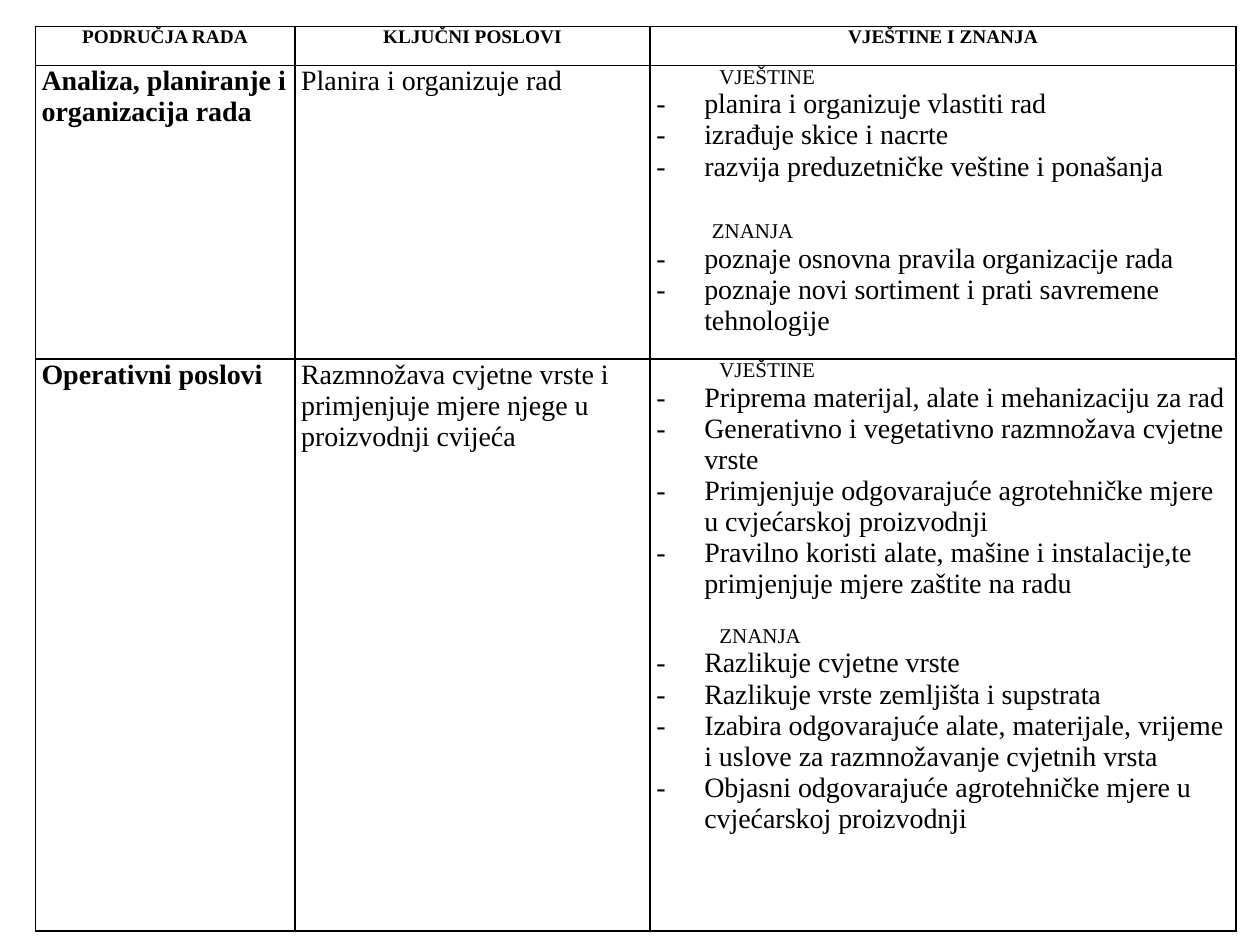
from dataclasses import dataclass

from lxml import etree
from pptx import Presentation
from pptx.dml.color import RGBColor
from pptx.enum import text
from pptx.oxml import ns
from pptx.util import Inches, Pt

COLORS = {"ink": "000000", "border": "000000"}
FONT = "Times New Roman"
HEADER_SIZE, HEADING_SIZE, BODY_SIZE = 11, 12, 16
COLUMN_WIDTHS = (2.06, 2.82, 4.65)
ROW_HEIGHTS = (0.31, 2.33, 4.54)
HEADERS = ("PODRUČJA RADA", "KLJUČNI POSLOVI", "VJEŠTINE I ZNANJA")


@dataclass
class Section:
    title: str
    items: tuple[str, ...]
    indent: float = 0.5
    space_before: float = 0


@dataclass
class WorkArea:
    name: str
    key_task: str
    sections: tuple[Section, ...]
    alignment: text.PP_ALIGN = text.PP_ALIGN.LEFT


WORK_AREAS = (
    WorkArea(
        "Analiza, planiranje i organizacija rada",
        "Planira i organizuje rad",
        (
            Section("VJEŠTINE", (
                "planira i organizuje vlastiti rad",
                "izrađuje skice i nacrte",
                "razvija preduzetničke veštine i ponašanja",
            )),
            Section("ZNANJA", (
                "poznaje osnovna pravila organizacije rada",
                "poznaje novi sortiment i prati savremene tehnologije",
            ), indent=0.44, space_before=21.5),
        ),
    ),
    WorkArea(
        "Operativni poslovi",
        "Razmnožava cvjetne vrste i primjenjuje mjere njege u proizvodnji cvijeća",
        (
            Section("VJEŠTINE", (
                "Priprema materijal, alate i mehanizaciju za rad",
                "Generativno i vegetativno razmnožava cvjetne vrste",
                "Primjenjuje odgovarajuće agrotehničke mjere u cvjećarskoj proizvodnji",
                "Pravilno koristi alate, mašine i instalacije,te primjenjuje mjere zaštite na radu",
            )),
            Section("ZNANJA", (
                "Razlikuje cvjetne vrste",
                "Razlikuje vrste zemljišta i supstrata",
                "Izabira odgovarajuće alate, materijale, vrijeme i uslove za razmnožavanje cvjetnih vrsta",
                "Objasni odgovarajuće agrotehničke mjere u cvjećarskoj proizvodnji",
            ), space_before=14),
        ),
        text.PP_ALIGN.JUSTIFY,
    ),
)


def write(paragraph, content: str, size: float, bold: bool = False,
          alignment: text.PP_ALIGN = text.PP_ALIGN.LEFT) -> None:
    paragraph.text = content
    paragraph.alignment = alignment
    for run in paragraph.runs:
        run.font.name = FONT
        run.font.size = Pt(size)
        run.font.bold = bold
        run.font.color.rgb = RGBColor.from_string(COLORS["ink"])


def set_indent(paragraph, left: float, first_line: float = 0) -> None:
    properties = paragraph._p.get_or_add_pPr()
    properties.set("marL", str(Inches(left)))
    properties.set("indent", str(Inches(first_line)))


def add_dash(paragraph) -> None:
    set_indent(paragraph, 0.38, -0.38)
    properties = paragraph._p.get_or_add_pPr()
    etree.SubElement(properties, ns.qn("a:buFont"), typeface=FONT)
    etree.SubElement(properties, ns.qn("a:buChar"), char="-")


def write_sections(cell, sections: tuple[Section, ...]) -> None:
    frame = cell.text_frame
    for number, section in enumerate(sections):
        heading = frame.add_paragraph() if number else frame.paragraphs[0]
        write(heading, section.title, HEADING_SIZE)
        set_indent(heading, section.indent)
        heading.space_before = Pt(section.space_before)
        for item in section.items:
            paragraph = frame.add_paragraph()
            write(paragraph, item, BODY_SIZE)
            add_dash(paragraph)


def format_cell(cell) -> None:
    cell.margin_left = cell.margin_right = Inches(0.05)
    cell.margin_top = cell.margin_bottom = 0
    cell.fill.background()
    properties = cell._tc.get_or_add_tcPr()
    for position, side in enumerate(("lnL", "lnR", "lnT", "lnB")):
        line = etree.Element(ns.qn(f"a:{side}"), w=str(Pt(1)))
        fill = etree.SubElement(line, ns.qn("a:solidFill"))
        etree.SubElement(fill, ns.qn("a:srgbClr"), val=COLORS["border"])
        properties.insert(position, line)


def add_work_table(slide) -> None:
    table = slide.shapes.add_table(
        len(ROW_HEIGHTS), len(COLUMN_WIDTHS), Inches(0.28), Inches(0.21),
        Inches(sum(COLUMN_WIDTHS)), Inches(sum(ROW_HEIGHTS))).table
    table.first_row = table.horz_banding = False
    for column, width in zip(table.columns, COLUMN_WIDTHS):
        column.width = Inches(width)
    for row, height in zip(table.rows, ROW_HEIGHTS):
        row.height = Inches(height)
    for cell in table.iter_cells():
        format_cell(cell)
    for column, header in enumerate(HEADERS):
        write(table.cell(0, column).text_frame.paragraphs[0], header,
              HEADER_SIZE, True, text.PP_ALIGN.CENTER)
    for row, area in enumerate(WORK_AREAS, start=1):
        write(table.cell(row, 0).text_frame.paragraphs[0], area.name,
              BODY_SIZE, True, area.alignment)
        write(table.cell(row, 1).text_frame.paragraphs[0], area.key_task, BODY_SIZE)
        write_sections(table.cell(row, 2), area.sections)


def main() -> None:
    presentation = Presentation()
    presentation.slide_width = Inches(10)
    presentation.slide_height = Inches(7.5)
    slide = presentation.slides.add_slide(presentation.slide_layouts[6])
    add_work_table(slide)
    presentation.save("out.pptx")


if __name__ == "__main__":
    main()
